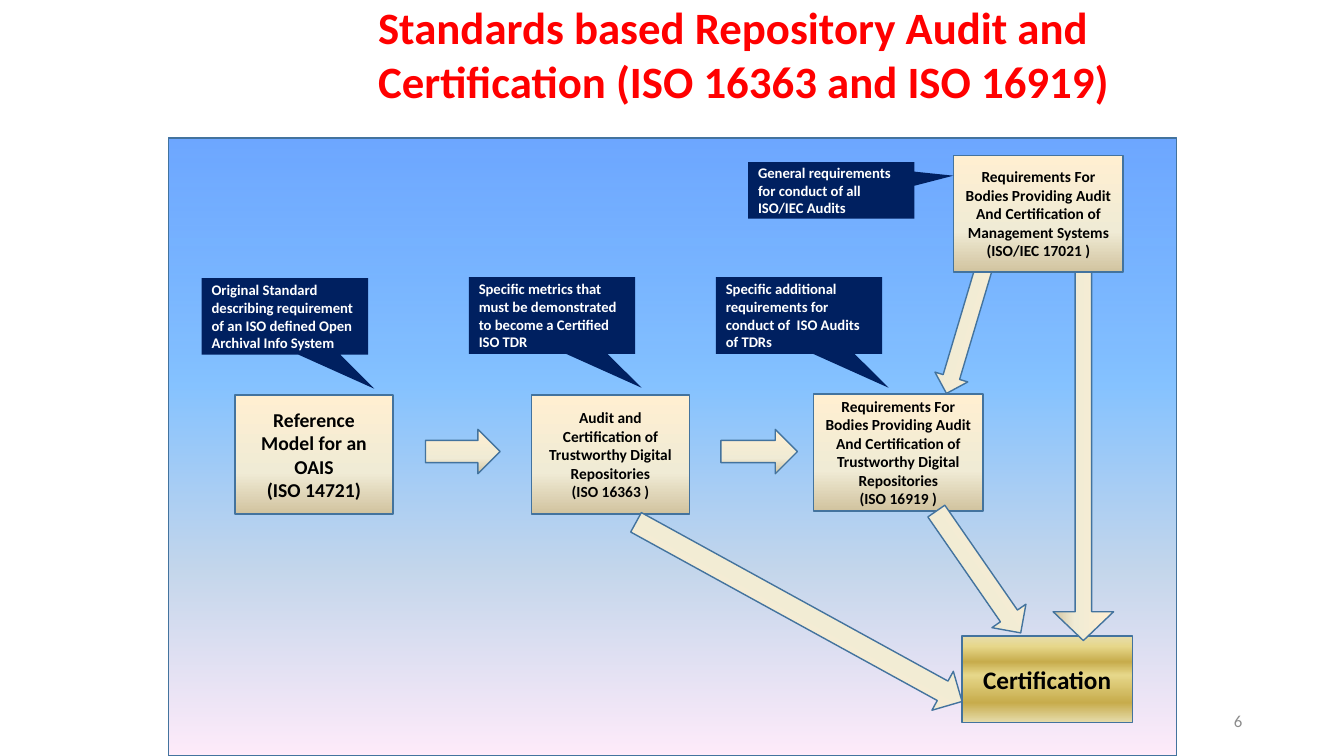
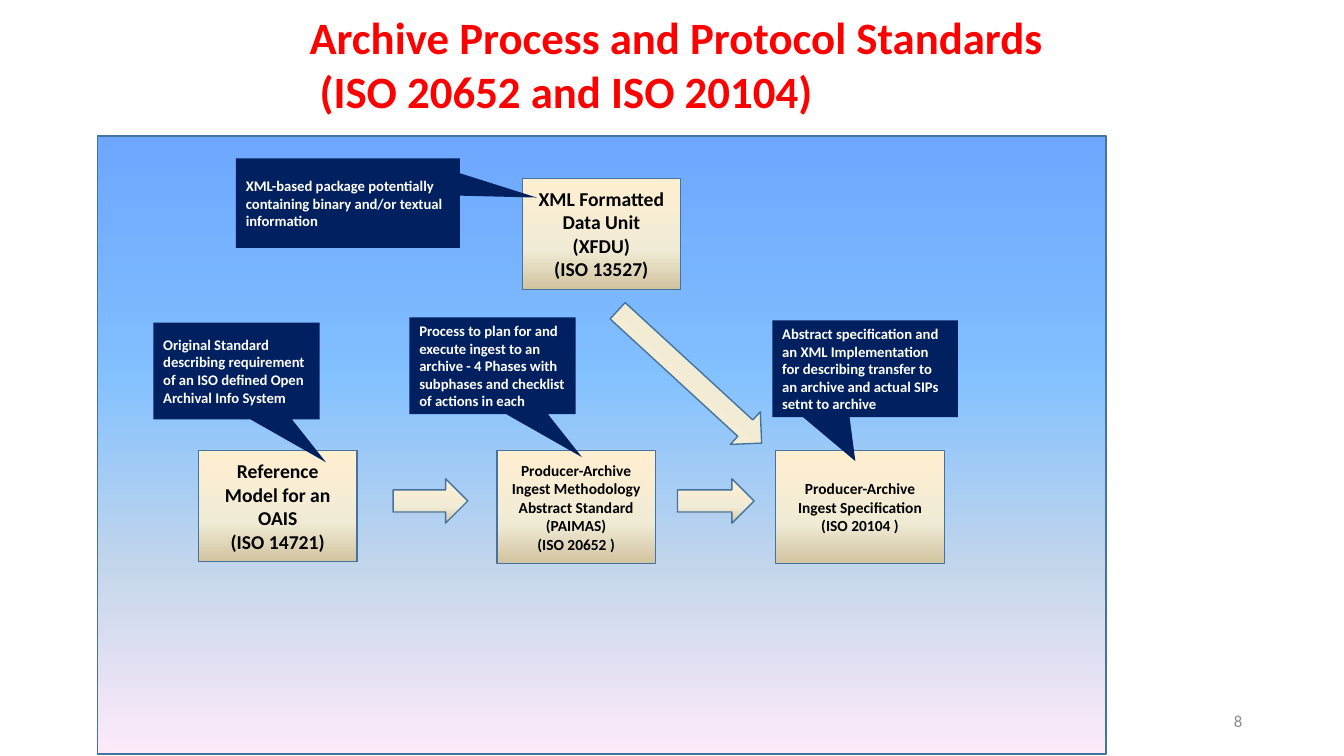
from lxml.etree import SubElement
from pptx import Presentation
from pptx.dml.color import RGBColor
from pptx.enum.shapes import MSO_SHAPE
from pptx.enum.text import MSO_ANCHOR, MSO_AUTO_SIZE, PP_ALIGN
from pptx.oxml.ns import qn
from pptx.util import Inches, Pt

FONT = "Calibri"
RED, NAVY, BLACK, WHITE, GRAY = "FF0000", "002060", "000000", "FFFFFF", "8C8C8C"
OUTLINE = "43739E"
SKY = [(0, "5E9EFF", 90), (40, "85C2FF"), (70, "C4D6EB"), (100, "FFEBFA")]
SAND = [(0, "FFEFD1"), (65, "F0EBD5"), (100, "D1C39F")]
GOLD = [(0, "E6DCAC"), (12, "E6D78A"), (30, "C7AC4C"),
        (45, "E6D78A"), (77, "C7AC4C"), (100, "E6DCAC")]

PANEL_SIZE = (10, 6.13)
TITLE_SIZE = (7.61, 1.48)
NUMBER_BOX = (9.42, 6.95, 3, 0.4)
TAIL = (0.538, 0.944)
OAIS = "Reference Model for an OAIS\n(ISO 14721)"
OAIS_NOTE = "Original Standard describing requirement of an ISO defined Open Archival Info System"

SLIDES = [
    {
        "title": "Standards based Repository Audit and Certification (ISO 16363 and ISO 16919)",
        "title_at": (3.65, -0.05),
        "panel_at": (1.67, 1.37),
        "number": "6",
        "boxes": [
            ((2.33, 3.92, 1.57, 1.18), OAIS, 14, SAND),
            ((5.27, 3.92, 1.57, 1.18),
             "Audit and Certification of Trustworthy Digital Repositories\n(ISO 16363 )", 11, SAND),
            ((8.07, 3.91, 1.68, 1.16),
             "Requirements For Bodies Providing Audit And Certification of "
             "Trustworthy Digital Repositories\n(ISO 16919 )", 11, SAND),
            ((9.54, 6.31, 1.69, 0.86), "Certification", 18, GOLD),
        ],
        "arrows": [
            ((8.93, 3.12, 1.28, 0.34), 106.6, False, None),
            ((4.22, 4.26, 0.74, 0.44), 0, False, None),
            ((8.97, 5.47, 1.47, 0.41), 55.3, False, None),
            ((8.86, 4.17, 3.77, 0.6), 90, False, (0.274, 0.477)),
            ((7.15, 4.26, 0.76, 0.44), 0, False, None),
            ((6.08, 5.85, 3.69, 0.44), 28.8, True, None),
        ],
        "front_boxes": [
            ((9.46, 1.54, 1.68, 1.16),
             "Requirements For Bodies Providing Audit And Certification of "
             "Management Systems\n(ISO/IEC 17021 )", 11, SAND),
        ],
        "callouts": [
            ((7.42, 1.61, 1.65, 0.56), "General requirements for conduct of all ISO/IEC Audits",
             (0.734, -0.261)),
            ((7.1, 2.75, 1.65, 0.76),
             "Specific additional requirements for conduct of  ISO Audits of TDRs", TAIL),
            ((4.65, 2.75, 1.65, 0.76),
             "Specific metrics that must be demonstrated to become a Certified ISO TDR", TAIL),
            ((2, 2.76, 1.65, 0.76), OAIS_NOTE, TAIL),
        ],
    },
    {
        "title": "Archive Process and Protocol Standards\n (ISO 20652 and ISO 20104)",
        "title_at": (2.97, 0.05),
        "panel_at": (0.97, 1.35),
        "number": "8",
        "boxes": [
            ((1.97, 4.47, 1.57, 1.1), OAIS, 14, SAND),
            ((4.93, 4.47, 1.57, 1.12),
             "Producer-Archive Ingest Methodology Abstract Standard\n(PAIMAS)\n(ISO 20652 )",
             11, SAND),
            ((7.69, 4.47, 1.68, 1.12),
             "Producer-Archive Ingest Specification\n(ISO 20104 )", 11, SAND),
        ],
        "arrows": [
            ((3.9, 4.75, 0.74, 0.44), 0, False, None),
            ((6.72, 4.75, 0.76, 0.44), 0, False, None),
            ((5.87, 3.52, 1.94, 0.44), 42.6, True, None),
        ],
        "front_boxes": [
            ((5.18, 1.77, 1.57, 1.1), "XML Formatted Data Unit (XFDU)\n(ISO 13527)", 14, SAND),
        ],
        "callouts": [
            ((7.66, 3.18, 1.84, 0.96),
             "Abstract specification and an XML Implementation for describing transfer "
             "to an archive and actual SIPs setnt to archive", (-0.052, 0.954)),
            ((4.06, 3.15, 1.65, 0.96),
             "Process to plan for and execute ingest to an archive - 4 Phases with "
             "subphases and checklist of actions in each", TAIL),
            ((1.52, 3.2, 1.65, 0.96), OAIS_NOTE, TAIL),
            ((2.34, 1.57, 2.22, 0.89),
             "XML-based package potentially containing binary and/or textual information",
             (0.844, -0.062)),
        ],
    },
]


def rgb(color):
    return RGBColor.from_string(color)


def inches(box):
    return [Inches(v) for v in box]


def write(sp, text, size, color, bold=True, align=PP_ALIGN.LEFT, anchor=MSO_ANCHOR.MIDDLE):
    tf = sp.text_frame
    tf.text = text
    tf.word_wrap = True
    tf.auto_size = MSO_AUTO_SIZE.NONE
    tf.vertical_anchor = anchor
    for p in tf.paragraphs:
        p.alignment = align
        for r in p.runs:
            r.font.name, r.font.size, r.font.bold = FONT, Pt(size), bold
            r.font.color.rgb = rgb(color)


def fill_gradient(sp, stops):
    sp.fill.gradient()
    sp.fill.gradient_angle = 270
    stop_list = sp._element.spPr.find(".//" + qn("a:gsLst"))
    for old in list(stop_list):
        stop_list.remove(old)
    for pos, color, *alpha in stops:
        stop = SubElement(stop_list, qn("a:gs"), pos=str(pos * 1000))
        clr = SubElement(stop, qn("a:srgbClr"), val=color)
        for value in alpha:
            SubElement(clr, qn("a:alpha"), val=str(value * 1000))


def add_shape(s, kind, box, adjust=None):
    sp = s.shapes.add_shape(kind, *inches(box))
    sp.shadow.inherit = False
    for i, value in enumerate(adjust or ()):
        sp.adjustments[i] = value
    return sp


def add_gradient(s, kind, box, stops, adjust=None):
    sp = add_shape(s, kind, box, adjust)
    fill_gradient(sp, stops)
    sp.line.color.rgb = rgb(OUTLINE)
    sp.line.width = Pt(1)
    return sp


def add_box(s, box, text, size, stops):
    sp = add_gradient(s, MSO_SHAPE.RECTANGLE, box, stops)
    write(sp, text, size, BLACK, align=PP_ALIGN.CENTER)


def add_arrow(s, box, angle, flipped, adjust):
    sp = add_gradient(s, MSO_SHAPE.RIGHT_ARROW, box, SAND, adjust)
    sp.rotation = angle
    if flipped:
        sp._element.spPr.xfrm.set("flipV", "1")


def add_callout(s, box, text, tail):
    sp = add_shape(s, MSO_SHAPE.RECTANGULAR_CALLOUT, box, tail)
    sp.fill.solid()
    sp.fill.fore_color.rgb = rgb(NAVY)
    sp.line.fill.background()
    write(sp, text, 10.5, WHITE)


def build_slide(prs, data):
    s = prs.slides.add_slide(prs.slide_layouts[5])
    title = s.shapes.title
    title.left, title.top, title.width, title.height = inches(data["title_at"] + TITLE_SIZE)
    write(title, data["title"], 32, RED, anchor=MSO_ANCHOR.TOP)
    add_gradient(s, MSO_SHAPE.RECTANGLE, data["panel_at"] + PANEL_SIZE, SKY)
    for key, add in (("boxes", add_box), ("arrows", add_arrow),
                     ("front_boxes", add_box), ("callouts", add_callout)):
        for part in data[key]:
            add(s, *part)
    number = s.shapes.add_textbox(*inches(NUMBER_BOX))
    write(number, data["number"], 12, GRAY, bold=False, align=PP_ALIGN.RIGHT)


def main():
    prs = Presentation()
    prs.slide_width, prs.slide_height = Inches(13.33), Inches(7.5)
    for data in SLIDES:
        build_slide(prs, data)
    prs.save("out.pptx")


if __name__ == "__main__":
    main()
